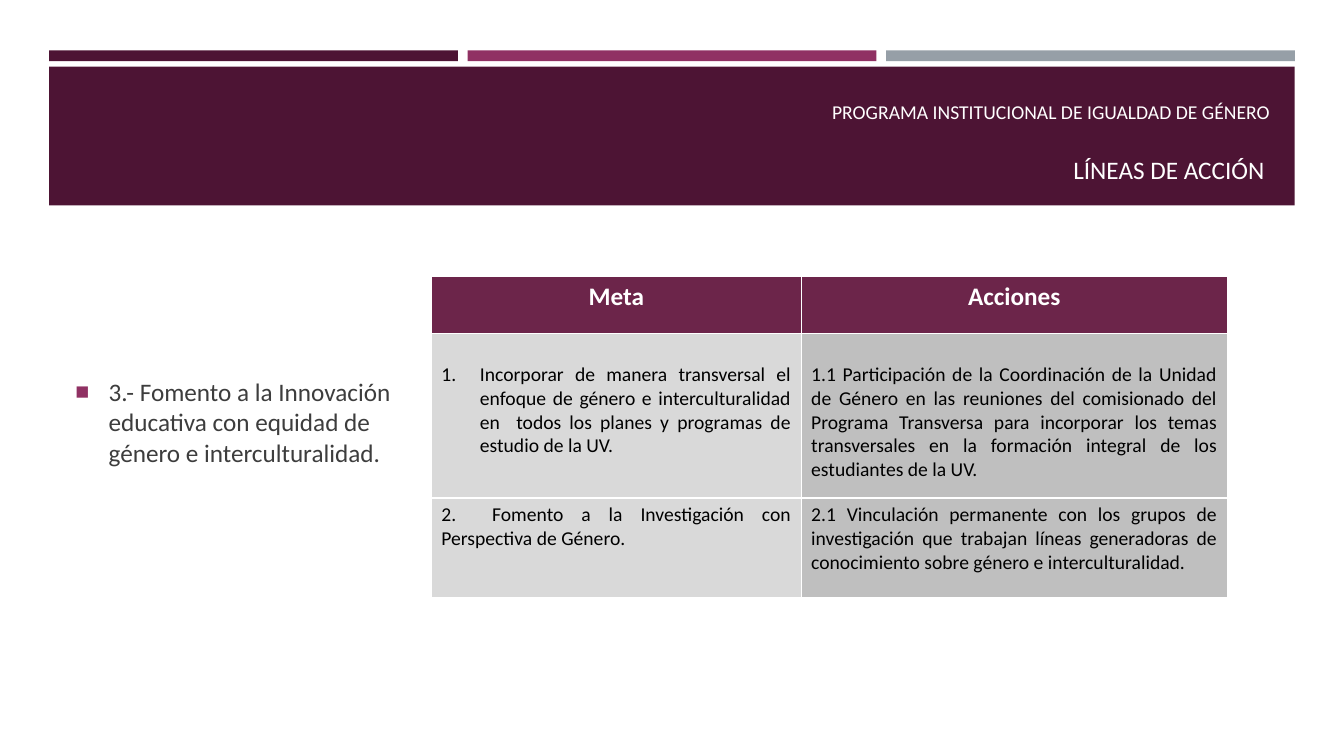
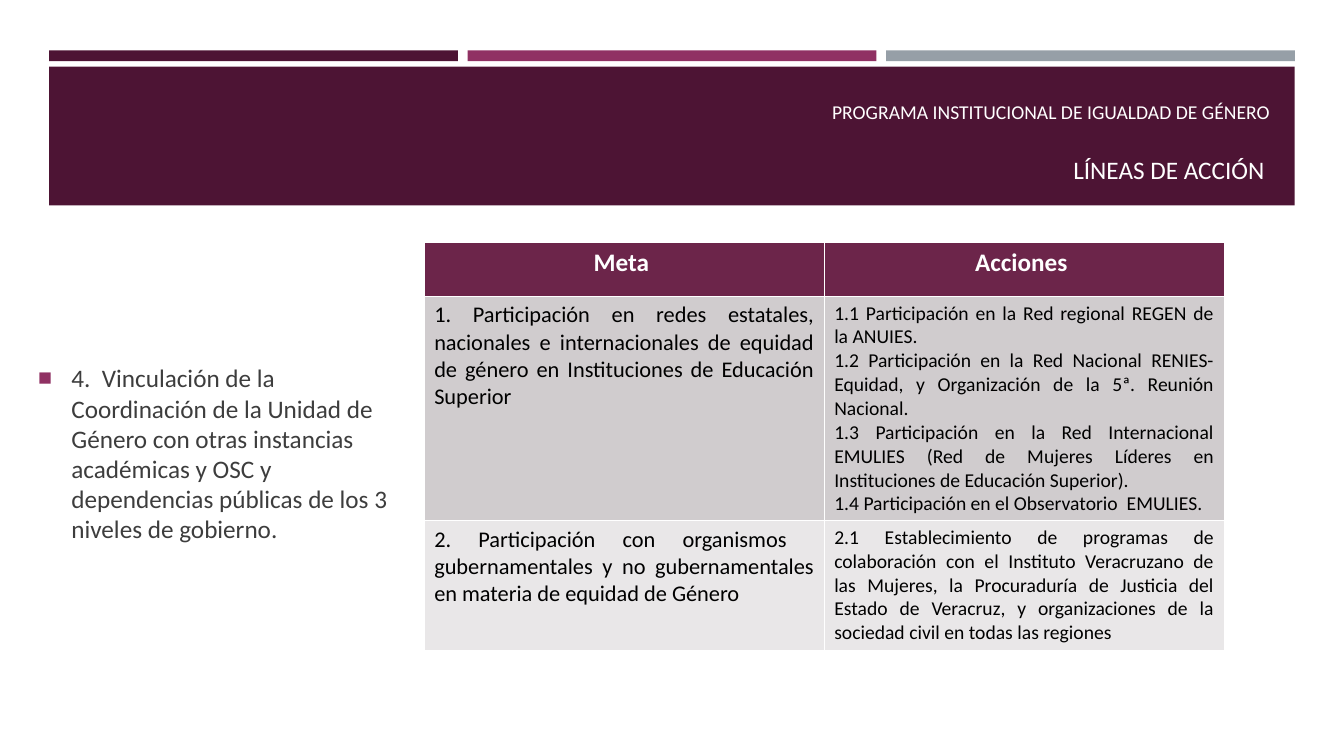
import lxml.etree
import pptx
import pptx.dml.color
import pptx.enum.shapes
import pptx.enum.text
import pptx.oxml.ns
import pptx.util

Cm = pptx.util.Cm
Pt = pptx.util.Pt
RGBColor = pptx.dml.color.RGBColor
ALIGN = pptx.enum.text.PP_ALIGN
ANCHOR = pptx.enum.text.MSO_ANCHOR

PLUM = RGBColor(0x4D, 0x14, 0x34)
MAGENTA = RGBColor(0x90, 0x31, 0x63)
STEEL = RGBColor(0x96, 0x9F, 0xA7)
HEADER = RGBColor(0x6C, 0x25, 0x4A)
WHITE = RGBColor(0xFF, 0xFF, 0xFF)
BLACK = RGBColor(0x00, 0x00, 0x00)
CHARCOAL = RGBColor(0x3D, 0x3D, 0x3D)
SILVER = RGBColor(0xD9, 0xD9, 0xD9)
GREY = RGBColor(0xBF, 0xBF, 0xBF)
MAUVE = RGBColor(0xD0, 0xCC, 0xCE)
PALE_MAUVE = RGBColor(0xE9, 0xE7, 0xE8)

BAND_LEFT, BAND_WIDTH, BAR_GAP = 1.24, 31.39, 0.25
TITLE_LINES = [
    ("PROGRAMA INSTITUCIONAL DE IGUALDAD DE GÉNERO", 14, 0),
    ("LÍNEAS DE ACCIÓN ", 18, 22),
]

GOALS_INNOVATION = {
    "place": (10.87, 6.96),
    "columns": (9.32, 10.74),
    "rows": (1.45, 4.14, 2.51),
    "headings": ("Meta", "Acciones"),
    "fills": ((SILVER, GREY), (SILVER, GREY)),
    "sizes": (14, 14),
    "body": (
        (
            ["Incorporar de manera transversal el enfoque de género e interculturalidad "
             "en  todos los planes y programas de estudio de la UV. "],
            ["1.1 Participación de la Coordinación de la Unidad de Género en las reuniones "
             "del comisionado del Programa Transversa para incorporar los temas "
             "transversales en la formación integral de los estudiantes de la UV."],
        ),
        (
            ["2.  Fomento a la Investigación con Perspectiva de Género."],
            ["2.1 Vinculación permanente con los grupos de investigación que trabajan "
             "líneas generadoras de conocimiento sobre género e interculturalidad."],
        ),
    ),
}

GOALS_OUTREACH = {
    "place": (10.69, 6.1),
    "columns": (10.08, 10.08),
    "rows": (1.37, 5.65, 3.27),
    "headings": ("Meta ", "Acciones "),
    "fills": ((MAUVE, MAUVE), (PALE_MAUVE, PALE_MAUVE)),
    "sizes": (16, 14),
    "body": (
        (
            ["1. Participación en redes estatales, nacionales e internacionales de equidad "
             "de género en Instituciones de Educación Superior"],
            ["1.1 Participación en la Red regional REGEN de la ANUIES.",
             "1.2 Participación en la Red Nacional RENIES-Equidad, y Organización de la 5ª. "
             "Reunión Nacional.",
             "1.3 Participación en la Red Internacional EMULIES (Red de Mujeres Líderes en "
             "Instituciones de Educación Superior).",
             "1.4 Participación en el Observatorio  EMULIES."],
        ),
        (
            ["2. Participación con organismos  gubernamentales y no gubernamentales en "
             "materia de equidad de Género"],
            ["2.1 Establecimiento de programas de colaboración con el Instituto Veracruzano "
             "de las Mujeres, la Procuraduría de Justicia del Estado de Veracruz, y "
             "organizaciones de la sociedad civil en todas las regiones"],
        ),
    ),
}


def apply_format(target, values):
    """Set each named attribute of the target."""
    for name, value in values.items():
        setattr(target, name, value)


def write_paragraph(paragraph, text, size, color, alignment, bold=False):
    """Write one formatted run into a paragraph."""
    paragraph.alignment = alignment
    run = paragraph.add_run()
    run.text = text
    apply_format(run.font, {"name": "Calibri", "size": Pt(size), "bold": bold})
    run.font.color.rgb = color


def add_list_mark(paragraph, indent, marks):
    """Give a paragraph a hanging indent and its bullet or number elements."""
    properties = paragraph._p.get_or_add_pPr()
    properties.set("marL", str(Cm(indent)))
    properties.set("indent", str(-Cm(indent)))
    for tag, attributes in marks:
        lxml.etree.SubElement(properties, pptx.oxml.ns.qn(tag), attributes)
    return properties


def add_rectangle(slide, left, top, width, height, color):
    """Draw a plain filled rectangle."""
    shape = slide.shapes.add_shape(
        pptx.enum.shapes.MSO_SHAPE.RECTANGLE, Cm(left), Cm(top), Cm(width), Cm(height))
    shape.shadow.inherit = False
    shape.fill.solid()
    shape.fill.fore_color.rgb = color
    shape.line.fill.background()


def add_text_frame(slide, place, anchor):
    """Add a wrapping text box and return its frame."""
    frame = slide.shapes.add_textbox(*map(Cm, place)).text_frame
    apply_format(frame, {"word_wrap": True, "vertical_anchor": anchor})
    return frame


def add_heading(slide):
    """Draw the coloured bars, the title band and the title."""
    bar_width = (BAND_WIDTH - 2 * BAR_GAP) / 3
    for index, color in enumerate((PLUM, MAGENTA, STEEL)):
        left = BAND_LEFT + index * (bar_width + BAR_GAP)
        add_rectangle(slide, left, 1.27, bar_width, 0.27, color)
    add_rectangle(slide, BAND_LEFT, 1.68, BAND_WIDTH, 3.5, PLUM)
    frame = add_text_frame(slide, (1.63, 2.03, 30.63, 2.74), ANCHOR.BOTTOM)
    for index, (text, size, space) in enumerate(TITLE_LINES):
        paragraph = frame.add_paragraph() if index else frame.paragraphs[0]
        write_paragraph(paragraph, text, size, WHITE, ALIGN.RIGHT)
        paragraph.space_before = Pt(space)


def add_action_line(slide, place, text, margin_top=0.13):
    """Write the bulleted line of action at the left."""
    frame = add_text_frame(slide, place, ANCHOR.MIDDLE)
    frame.margin_top = Cm(margin_top)
    paragraph = frame.paragraphs[0]
    write_paragraph(paragraph, text, 18, CHARCOAL, ALIGN.LEFT)
    properties = add_list_mark(paragraph, 0.84, [
        ("a:buClr", {}), ("a:buSzPct", {"val": "92000"}),
        ("a:buFont", {"typeface": "Arial"}), ("a:buChar", {"char": "■"})])
    color = properties.find(pptx.oxml.ns.qn("a:buClr"))
    lxml.etree.SubElement(color, pptx.oxml.ns.qn("a:srgbClr"), {"val": str(MAGENTA)})


def fill_cell(cell, texts, fill, size, color, alignment, bold=False):
    """Fill a table cell and write its paragraphs."""
    cell.fill.solid()
    cell.fill.fore_color.rgb = fill
    for index, text in enumerate(texts):
        frame = cell.text_frame
        paragraph = frame.add_paragraph() if index else frame.paragraphs[0]
        write_paragraph(paragraph, text, size, color, alignment, bold)


def add_goal_table(slide, goals):
    """Build the table of goals and actions."""
    columns, rows = goals["columns"], goals["rows"]
    table = slide.shapes.add_table(
        len(rows), len(columns), *map(Cm, goals["place"]),
        Cm(sum(columns)), Cm(sum(rows))).table
    table.horz_banding = False
    for column, width in zip(table.columns, columns):
        column.width = Cm(width)
    for row, height in zip(table.rows, rows):
        row.height = Cm(height)
    for index, heading in enumerate(goals["headings"]):
        fill_cell(table.cell(0, index), [heading], HEADER, 18, WHITE, ALIGN.CENTER, True)
    for row_index, (texts, fills) in enumerate(zip(goals["body"], goals["fills"]), 1):
        for index, size in enumerate(goals["sizes"]):
            fill_cell(table.cell(row_index, index), texts[index], fills[index],
                      size, BLACK, ALIGN.JUSTIFY)
    return table


def add_content_slide(presentation):
    """Add a blank slide with the shared heading."""
    slide = presentation.slides.add_slide(presentation.slide_layouts[6])
    add_heading(slide)
    return slide


def main():
    """Build and save the presentation."""
    presentation = pptx.Presentation()
    apply_format(presentation, {"slide_width": Cm(33.87), "slide_height": Cm(19.05)})

    slide = add_content_slide(presentation)
    add_action_line(
        slide, (1.65, 5, 8.61, 10.08),
        "3.- Fomento a la Innovación educativa con equidad de género e interculturalidad.",
        margin_top=1.3)
    table = add_goal_table(slide, GOALS_INNOVATION)
    for index in range(2):
        table.cell(1, index).margin_top = Cm(0.73)
    add_list_mark(table.cell(1, 0).text_frame.paragraphs[0], 0.97,
                  [("a:buFont", {"typeface": "+mj-lt"}),
                   ("a:buAutoNum", {"type": "arabicPeriod"})])

    slide = add_content_slide(presentation)
    add_action_line(
        slide, (0.71, 6.05, 9.63, 10.74),
        "4.  Vinculación de la Coordinación de la Unidad de Género con otras instancias "
        "académicas y OSC y dependencias públicas de los 3 niveles de gobierno.")
    add_goal_table(slide, GOALS_OUTREACH)

    presentation.save("out.pptx")


if __name__ == "__main__":
    main()
